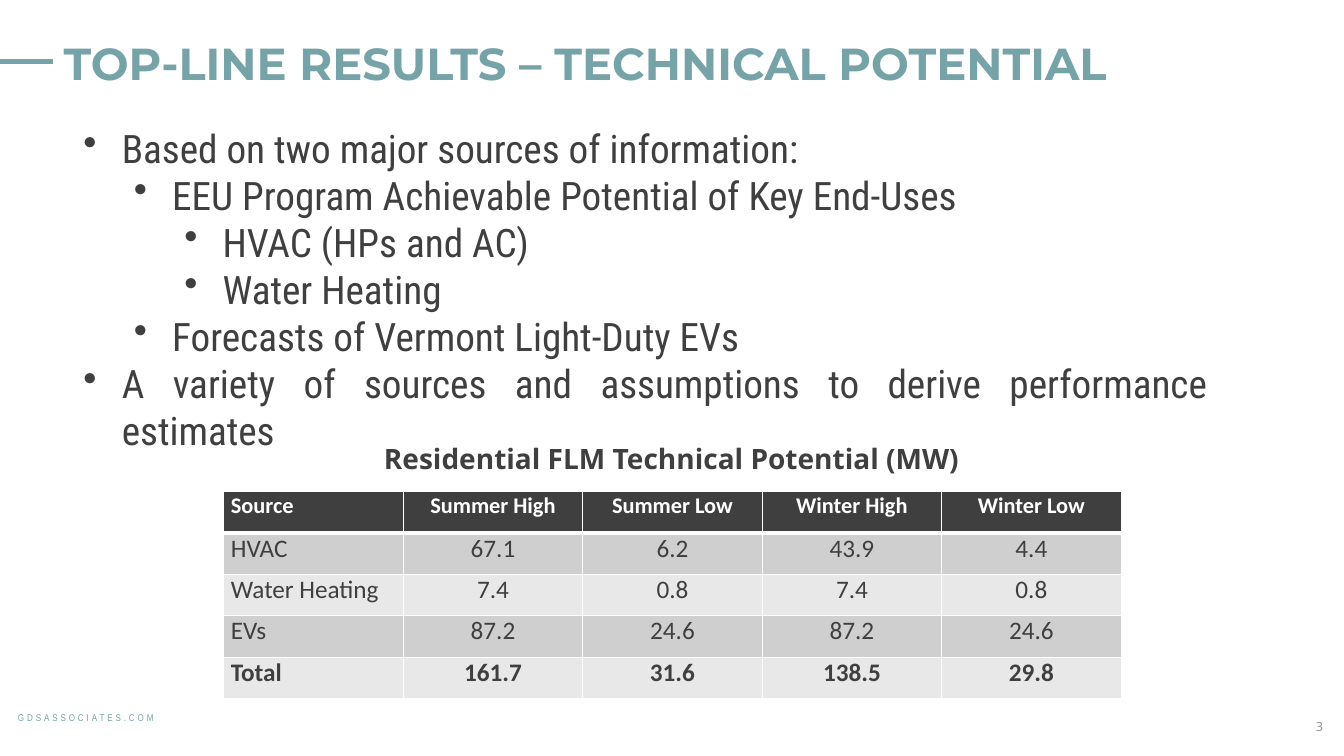
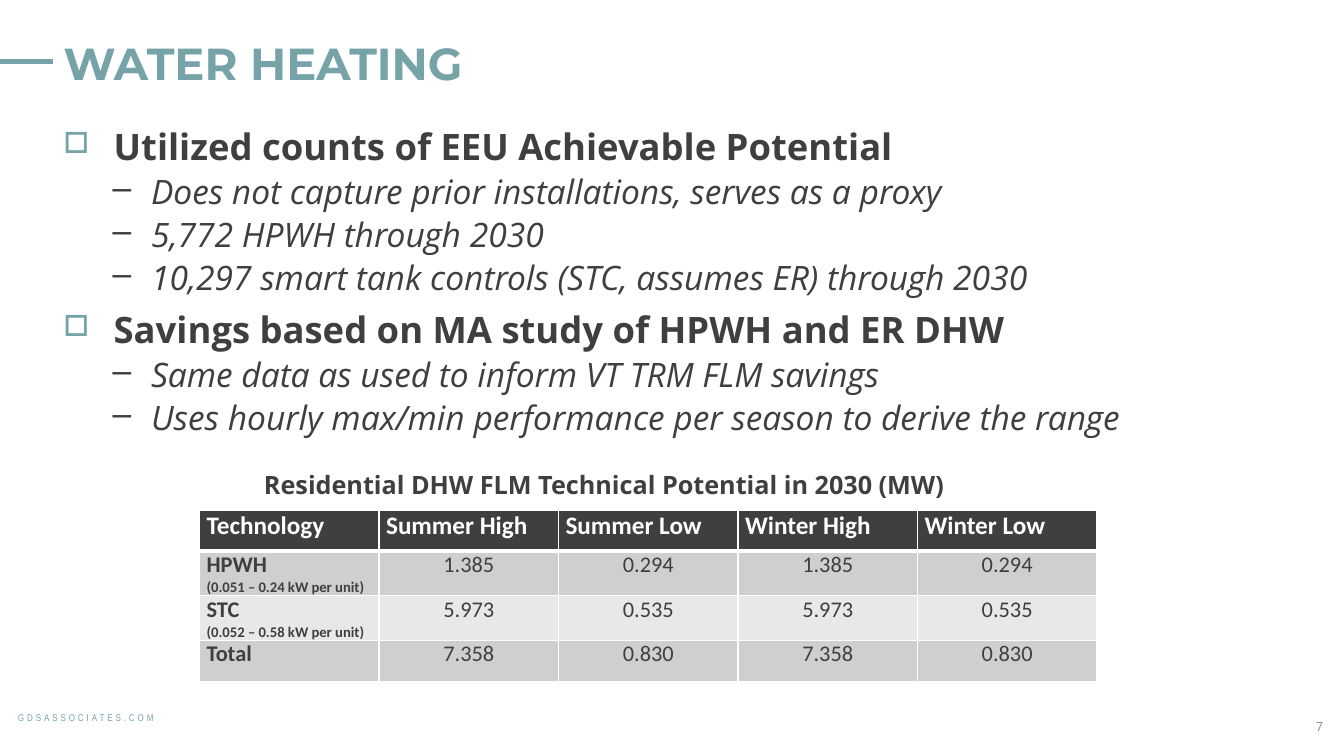
from dataclasses import dataclass

from lxml import etree
from pptx import Presentation
from pptx import util as u
from pptx.dml.color import RGBColor
from pptx.enum import shapes, text
from pptx.oxml import ns

TEAL = RGBColor(0x76, 0xA3, 0xA8)
CHARCOAL = RGBColor(0x3F, 0x3F, 0x3F)
GRAY = RGBColor(0x8C, 0x8C, 0x8C)
DARK_BAND = RGBColor(0xCF, 0xCF, 0xCF)
LIGHT_BAND = RGBColor(0xE8, 0xE8, 0xE8)
WHITE = RGBColor(0xFF, 0xFF, 0xFF)

GRID = 0.5
TABLE_COLUMN = 3.56
TABLE_ROW = 0.82
TITLE_ONLY = 5
LEFT, CENTER = text.PP_ALIGN.LEFT, text.PP_ALIGN.CENTER
RIGHT, JUSTIFY = text.PP_ALIGN.RIGHT, text.PP_ALIGN.JUSTIFY


@dataclass(frozen=True)
class Style:
    """Describe the look of a run of text."""

    size: float
    face: str
    color: RGBColor = CHARCOAL
    bold: bool = False
    italic: bool = False


@dataclass(frozen=True)
class Bullet:
    """Describe a bulleted paragraph, with indents in inches."""

    mark: str
    margin: float
    hang: float
    style: Style
    level: int = 0
    align: text.PP_ALIGN = LEFT
    color: RGBColor = CHARCOAL
    percent: int = 100
    before: float = 0
    spacing: float = 1.0


TITLE = Style(32, "Montserrat", TEAL, bold=True)
FOOTER = Style(7, "Arial Narrow", TEAL)
NUMBER = Style(9, "Open Sans", GRAY)
OUTLINE = Style(28, "Roboto Condensed")
POINT = Bullet("□", 0.5, 0.5, Style(26, "Open Sans", bold=True),
               color=TEAL, percent=80, before=10, spacing=0.9)
DETAIL = Bullet("–", 0.87, 0.38, Style(24, "Open Sans", italic=True),
                level=1, before=5, spacing=0.9)


def dot(level):
    """Return the round bullet of an outline level."""
    return Bullet("•", 0.38 + 0.5 * level, 0.38, OUTLINE, level, JUSTIFY)


def cells(*counts):
    """Turn counts of grid columns or rows into lengths."""
    return [u.Inches(GRID * count) for count in counts]


def element(parent, tag, **attributes):
    """Append a DrawingML element and return it."""
    child = etree.SubElement(parent, ns.qn(tag))
    for name, value in attributes.items():
        child.set(name, str(value))
    return child


def add_color(parent, tag, color):
    """Append an element that holds a plain colour."""
    element(element(parent, tag), "a:srgbClr", val=color)


def add_span(para, words, style):
    """Append a formatted run to a paragraph."""
    span = para.add_run()
    span.text = words
    span.font.size = u.Pt(style.size)
    span.font.name = style.face
    span.font.color.rgb = style.color
    span.font.bold = style.bold
    span.font.italic = style.italic
    return span


def next_para(frame, index):
    """Return the first paragraph of a frame or add another."""
    return frame.add_paragraph() if index else frame.paragraphs[0]


def add_box(page, place):
    """Add a wrapping text box at a grid place and return its frame."""
    frame = page.shapes.add_textbox(*cells(*place)).text_frame
    frame.word_wrap = True
    return frame


def add_line(page, place, words, style, align=LEFT):
    """Add a text box with one line and return its frame and run."""
    frame = add_box(page, place)
    para = frame.paragraphs[0]
    para.alignment = align
    return frame, add_span(para, words, style)


def format_bullet(para, bullet, first):
    """Apply indents, spacing and mark to a paragraph."""
    para.level = bullet.level
    para.alignment = bullet.align
    para.line_spacing = bullet.spacing
    para.space_before = u.Pt(0 if first else bullet.before)
    properties = para._p.get_or_add_pPr()
    properties.set("marL", str(u.Inches(bullet.margin)))
    properties.set("indent", str(-u.Inches(bullet.hang)))
    add_color(properties, "a:buClr", bullet.color)
    element(properties, "a:buSzPct", val=bullet.percent * 1000)
    element(properties, "a:buChar", char=bullet.mark)


def add_bullets(page, place, items):
    """Add a text box of bulleted paragraphs."""
    frame = add_box(page, place)
    for index, (bullet, words) in enumerate(items):
        para = next_para(frame, index)
        format_bullet(para, bullet, index == 0)
        add_span(para, words, bullet.style)


def add_borders(cell, row):
    """Draw white cell borders, heavier under the header row."""
    properties = cell._tc.get_or_add_tcPr()
    widths = {"L": 1, "R": 1, "T": 3 if row == 1 else 1, "B": 1 if row else 3}
    for side, width in widths.items():
        line = element(properties, f"a:ln{side}", w=u.Pt(width))
        add_color(line, "a:solidFill", WHITE)


def fill_cell(cell, row, color, lines, align):
    """Fill a table cell with styled lines of text."""
    add_borders(cell, row)
    cell.fill.solid()
    cell.fill.fore_color.rgb = color
    cell.margin_left = cell.margin_right = u.Inches(0.07)
    cell.margin_top = cell.margin_bottom = 0
    for index, (words, style) in enumerate(lines):
        para = next_para(cell.text_frame, index)
        para.alignment = align
        add_span(para, words, style)


def add_data_table(page, corner, rows, header_size, body_size,
                   header_align=CENTER, bold_total=False, bold_labels=False):
    """Add a banded table whose labels may carry a small second line."""
    count, width = len(rows), len(rows[0])
    place = cells(*corner, width * TABLE_COLUMN, count * TABLE_ROW)
    table = page.shapes.add_table(count, width, *place).table
    for row, values in enumerate(rows):
        table.rows[row].height = cells(TABLE_ROW)[0]
        for column, value in enumerate(values):
            label = column == 0
            if row == 0:
                color = CHARCOAL
                style = Style(header_size, "Calibri", WHITE, bold=True)
                align = LEFT if label else header_align
            else:
                color = DARK_BAND if row % 2 else LIGHT_BAND
                bold = bold_labels and label or bold_total and row == count - 1
                style = Style(body_size, "Calibri", bold=bold)
                align = LEFT if label else CENTER
            small = Style(10.5, "Calibri", bold=True)
            lines = [(words, small if index else style)
                     for index, words in enumerate(value.split("\n"))]
            fill_cell(table.cell(row, column), row, color, lines, align)


def add_page(deck, title, number):
    """Add a slide with its title, accent line, footer and number."""
    page = deck.slides.add_slide(deck.slide_layouts[TITLE_ONLY])
    box = page.shapes.title
    box.left, box.top, box.width, box.height = cells(1.06, 0.44, 24.4, 1.74)
    frame = box.text_frame
    frame.auto_size = text.MSO_AUTO_SIZE.NONE
    frame.vertical_anchor = text.MSO_ANCHOR.MIDDLE
    frame.paragraphs[0].alignment = LEFT
    frame.paragraphs[0].line_spacing = 0.9
    add_span(frame.paragraphs[0], title, TITLE)

    accent = page.shapes.add_connector(
        shapes.MSO_CONNECTOR.STRAIGHT, *cells(0, 1.22, 1.06, 1.22))
    accent.line.color.rgb = TEAL
    accent.line.width = u.Pt(3)
    element(accent._element.spPr, "a:effectLst")

    _, span = add_line(page, (0.16, 14.02, 3.24, 0.44),
                       "GDSASSOCIATES.COM", FOOTER)
    span.font._element.set("spc", "210")
    frame, _ = add_line(page, (19.02, 14.02, 7.42, 0.8), number, NUMBER, RIGHT)
    frame.vertical_anchor = text.MSO_ANCHOR.MIDDLE
    return page


def add_results(deck):
    """Build the slide of top-line results."""
    page = add_page(deck, "TOP-LINE RESULTS – TECHNICAL POTENTIAL", "3")
    add_bullets(page, (1.46, 2.36, 22.68, 5.86), [
        (dot(0), "Based on two major sources of information:"),
        (dot(1), "EEU Program Achievable Potential of Key End-Uses"),
        (dot(2), "HVAC (HPs and AC)"),
        (dot(2), "Water Heating"),
        (dot(1), "Forecasts of Vermont Light-Duty EVs"),
        (dot(0), "A variety of sources and assumptions to derive "
                 "performance estimates"),
    ])
    add_data_table(page, (4.44, 9.76), [
        ("Source", "Summer High", "Summer Low", "Winter High", "Winter Low"),
        ("HVAC", "67.1", "6.2", "43.9", "4.4"),
        ("Water Heating", "7.4", "0.8", "7.4", "0.8"),
        ("EVs", "87.2", "24.6", "87.2", "24.6"),
        ("Total", "161.7", "31.6", "138.5", "29.8"),
    ], header_size=16, body_size=18, bold_total=True)
    add_line(page, (7.42, 8.66, 12.22, 0.88),
             "Residential FLM Technical Potential (MW)",
             Style(20, "Open Sans", bold=True))


def add_water_heating(deck):
    """Build the slide on water heating."""
    page = add_page(deck, "WATER HEATING", "7")
    add_bullets(page, (1.06, 2.46, 24.4, 11.06), [
        (POINT, "Utilized counts of EEU Achievable Potential"),
        (DETAIL, "Does not capture prior installations, serves as a proxy"),
        (DETAIL, "5,772 HPWH through 2030"),
        (DETAIL, "10,297 smart tank controls (STC, assumes ER) through 2030"),
        (POINT, "Savings based on MA study of HPWH and ER DHW"),
        (DETAIL, "Same data as used to inform VT TRM FLM savings"),
        (DETAIL, "Uses hourly max/min performance per season to derive "
                 "the range"),
    ])
    add_data_table(page, (3.96, 10.12), [
        ("Technology", "Summer High", "Summer Low", "Winter High",
         "Winter Low"),
        ("HPWH\n(0.051 – 0.24 kW per unit)", "1.385", "0.294", "1.385",
         "0.294"),
        ("STC\n(0.052 – 0.58 kW per unit)", "5.973", "0.535", "5.973",
         "0.535"),
        ("Total", "7.358", "0.830", "7.358", "0.830"),
    ], header_size=18, body_size=16, header_align=LEFT, bold_labels=True)
    add_line(page, (5.04, 9.22, 15.6, 0.8),
             "Residential DHW FLM Technical Potential in 2030 (MW)",
             Style(18, "Open Sans", bold=True))


def main():
    """Build and save the deck."""
    deck = Presentation()
    deck.slide_width, deck.slide_height = u.Inches(13.33), u.Inches(7.5)
    add_results(deck)
    add_water_heating(deck)
    deck.save("out.pptx")


if __name__ == "__main__":
    main()
